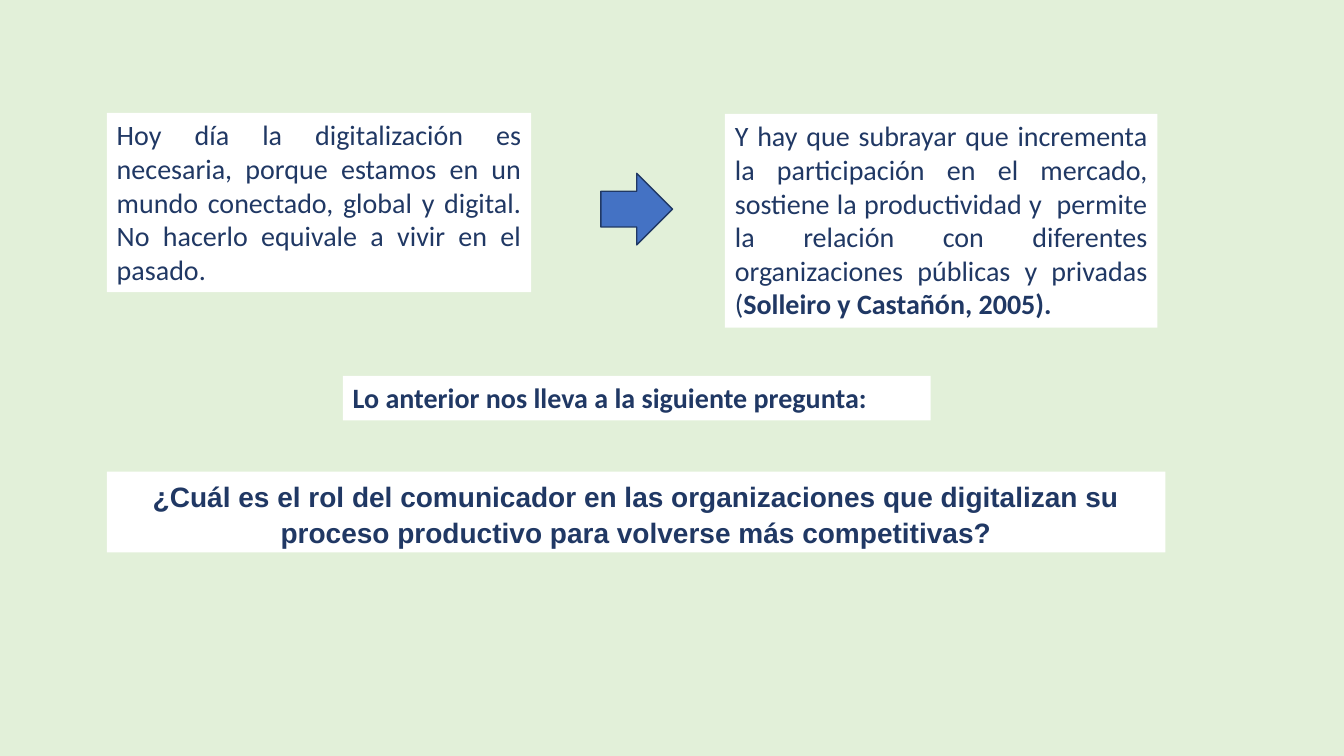
from pptx import Presentation
from pptx.dml.color import RGBColor
from pptx.enum.shapes import MSO_SHAPE
from pptx.enum.text import MSO_ANCHOR, MSO_AUTO_SIZE, PP_ALIGN
from pptx.util import Inches, Pt

COLORS = {"background": "E2F0D9", "panel": "FFFFFF", "text": "203864", "arrow": "4472C4"}
WIDTH, HEIGHT = Inches(13.33), Inches(7.5)


def color(name):
    return RGBColor.from_string(COLORS[name])


def place(left, top, width, height):
    """Turn percentages of the slide's size into lengths."""
    return [round(share * side / 100)
            for share, side in zip((left, top, width, height), (WIDTH, HEIGHT) * 2)]


def add_filled(s, kind, box, fill):
    sp = s.shapes.add_shape(kind, *place(*box))
    sp.shadow.inherit = False
    sp.fill.solid()
    sp.fill.fore_color.rgb = color(fill)
    return sp


def add_panel(s, box, runs, font="Calibri", **paragraph_format):
    """Add a white text panel; runs are (text, bold) pairs."""
    sp = add_filled(s, MSO_SHAPE.RECTANGLE, box, "panel")
    sp.line.fill.background()
    tf = sp.text_frame
    frame_format = {"word_wrap": True, "vertical_anchor": MSO_ANCHOR.TOP,
                    "auto_size": MSO_AUTO_SIZE.SHAPE_TO_FIT_TEXT}
    for name, value in frame_format.items():
        setattr(tf, name, value)
    p = tf.paragraphs[0]
    for name, value in paragraph_format.items():
        setattr(p, name, value)
    for text, bold in runs:
        r = p.add_run()
        r.text = text
        for name, value in {"name": font, "size": Pt(20), "bold": bold}.items():
            setattr(r.font, name, value)
        r.font.color.rgb = color("text")


def add_arrow(s, box):
    sp = add_filled(s, MSO_SHAPE.RIGHT_ARROW, box, "arrow")
    sp.line.color.rgb = color("text")
    sp.line.width = Pt(1)


def main():
    prs = Presentation()
    prs.slide_width, prs.slide_height = WIDTH, HEIGHT
    s = prs.slides.add_slide(prs.slide_layouts[6])
    s.background.fill.solid()
    s.background.fill.fore_color.rgb = color("background")

    # Premise and consequence, joined by an arrow
    add_panel(s, (7.95, 14.93, 31.58, 23.73), [
        ("Hoy día la digitalización es necesaria, porque estamos en un mundo conectado, "
         "global y digital. No hacerlo equivale a vivir en el pasado.", False),
    ], alignment=PP_ALIGN.JUSTIFY)
    add_panel(s, (53.94, 15.07, 32.18, 28.27), [
        ("Y hay que subrayar que incrementa la participación en el mercado, sostiene la "
         "productividad y  permite la relación con diferentes organizaciones públicas y "
         "privadas (", False),
        ("Solleiro y Castañón, 2005).", True),
    ], alignment=PP_ALIGN.JUSTIFY)
    add_arrow(s, (44.71, 22.93, 5.33, 9.47))

    # Lead-in and question
    add_panel(s, (25.51, 49.73, 43.74, 5.87), [
        ("Lo anterior nos lleva a la siguiente pregunta:", True),
    ], alignment=PP_ALIGN.LEFT)
    add_panel(s, (7.95, 62.4, 78.77, 10.67), [
        ("¿Cuál es el rol del comunicador en las organizaciones que digitalizan su "
         "proceso productivo para volverse más competitivas?", True),
    ], font="Arial", alignment=PP_ALIGN.CENTER, line_spacing=1.07)

    prs.save("out.pptx")


if __name__ == "__main__":
    main()
